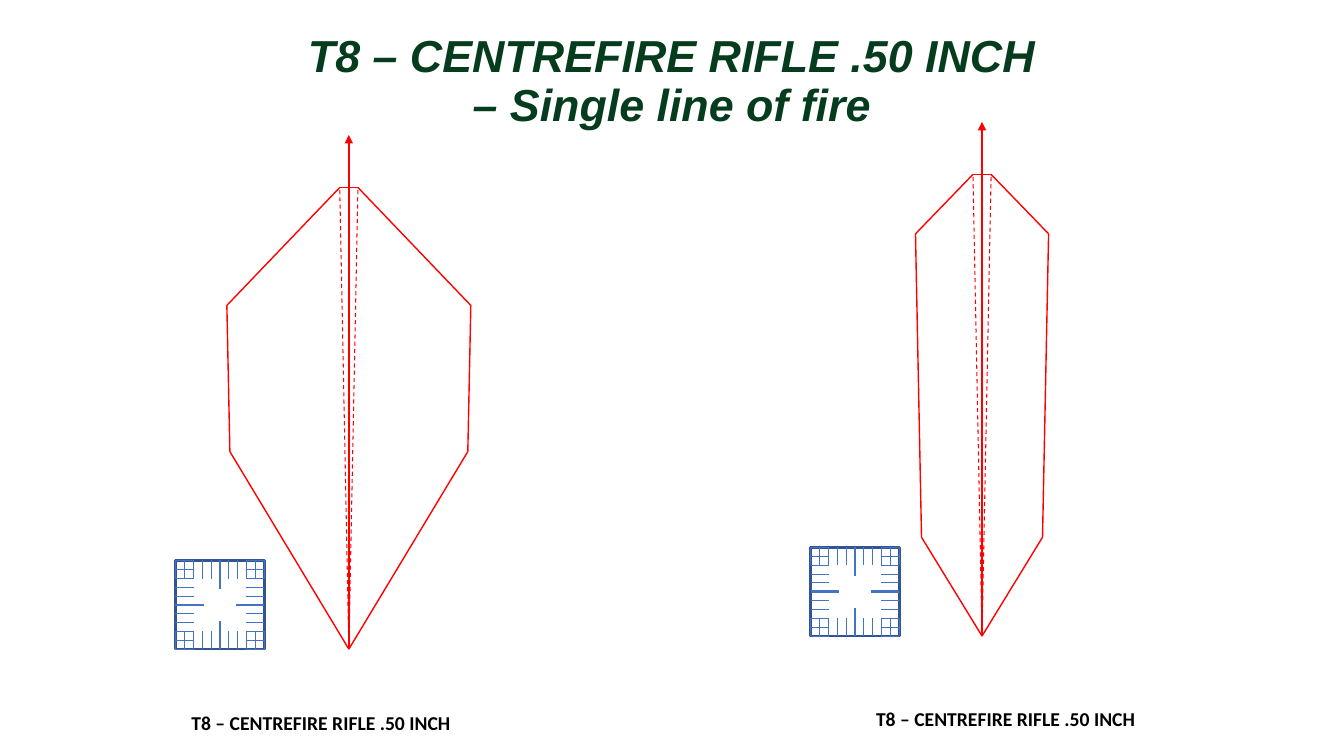
from lxml import etree
from pptx import Presentation
from pptx.dml.color import RGBColor
from pptx.enum.dml import MSO_LINE
from pptx.enum.shapes import MSO_CONNECTOR, MSO_SHAPE
from pptx.enum.text import MSO_ANCHOR, MSO_AUTO_SIZE, PP_ALIGN
from pptx.oxml.ns import qn
from pptx.util import Inches, Pt

RECT = MSO_SHAPE.RECTANGLE
STRAIGHT = MSO_CONNECTOR.STRAIGHT
DASH = MSO_LINE.DASH
CENTER = PP_ALIGN.CENTER
TOP = MSO_ANCHOR.TOP
GROW = MSO_AUTO_SIZE.SHAPE_TO_FIT_TEXT

COLORS = {
    "title": "053C1E",
    "label": "000000",
    "zone": "FF0000",
    "frame": "325491",
    "tick": "4472C4",
}
NAME = "T8 – CENTREFIRE RIFLE .50 INCH"


class Board:
    def __init__(self, slide):
        self.slide = slide
        self.group = None

    def color(self, name):
        return RGBColor.from_string(COLORS[name])

    def text(self, box, words, font, size, color, slant=False, space=None):
        shape = self.slide.shapes.add_textbox(*map(Inches, box))
        frame = shape.text_frame
        frame.word_wrap = True
        frame.vertical_anchor = TOP
        frame.text = words
        for para in frame.paragraphs:
            para.alignment = CENTER
            if space:
                para.line_spacing = space
            for run in para.runs:
                run.font.name = font
                run.font.size = Pt(size)
                run.font.bold = True
                run.font.italic = slant
                run.font.color.rgb = self.color(color)
        return frame

    def label(self, left, top):
        frame = self.text((left, top, 4.07, 0.34), NAME, "Calibri", 14, "label")
        frame.auto_size = GROW

    def line(self, start, end, color, width, dash=None, arrow=False):
        ends = map(Inches, (*start, *end))
        line = self.group.shapes.add_connector(STRAIGHT, *ends)
        line.line.color.rgb = self.color(color)
        line.line.width = Pt(width)
        if dash:
            line.line.dash_style = dash
        if arrow:
            tail = etree.SubElement(line.line._get_or_add_ln(), qn("a:tailEnd"))
            tail.set("type", "triangle")
        etree.SubElement(line._element.spPr, qn("a:effectLst"))
        return line

    def square(self, left, top, size):
        box = map(Inches, (left, top, size, size))
        shape = self.group.shapes.add_shape(RECT, *box)
        shape.shadow.inherit = False
        shape.fill.background()
        shape.line.color.rgb = self.color("frame")
        shape.line.width = Pt(2)
        return shape

    def scale(self, left, base):
        """Draw the square with ten divisions ticked inward from each side."""
        size, parts = 0.88, 10
        top, right = base - size, left + size
        frame = self.square(left, top, size)
        for i in range(parts + 1):
            mid = i == parts // 2
            tick, width = (0.28, 1.75) if mid else (0.18, 0.5)
            x, y = left + i * size / parts, top + i * size / parts
            sides = (
                ((x, top), (x, top + tick)),
                ((left, y), (left + tick, y)),
                ((x, base), (x, base - tick)),
                ((right, y), (right - tick, y)),
            )
            for site, (start, end) in enumerate(sides):
                line = self.line(start, end, "tick", width)
                if mid:
                    line.begin_connect(frame, site)

    def zone(self, axis, base, waist, wide):
        """Draw the danger area; waist and wide are (half width, y)."""
        nose, half = base - 4.58, 0.09
        origin = (axis, base)
        self.line(origin, (axis, base - 5.1), "zone", 1.5, arrow=True)
        for side in (-1, 1):
            tip = (axis + side * half, nose)
            bends = [(axis + side * dx, y) for dx, y in (waist, wide)]
            edge = [origin, *bends, tip]
            for start, end in zip(edge, edge[1:]):
                self.line(start, end, "zone", 1)
            self.line(origin, tip, "zone", 0.75, dash=DASH)
        self.line((axis - half, nose), (axis + half, nose), "zone", 1)

    def chart(self, left, axis, base, waist, wide):
        """Group one scale square with its danger area."""
        self.group = self.slide.shapes.add_group_shape()
        self.scale(left, base)
        self.zone(axis, base, waist, wide)


def main():
    deck = Presentation()
    deck.slide_width = Inches(13.33)
    deck.slide_height = Inches(7.5)
    board = Board(deck.slides.add_slide(deck.slide_layouts[6]))

    board.label(7.94, 6.96)
    board.chart(8.04, 9.74, 6.31, waist=(0.6, 5.33), wide=(0.66, 2.32))
    board.label(1.15, 7)
    board.text((0, 0.29, 13.33, 0.97), NAME + "\n– Single line of fire",
               "Arial", 32, "title", slant=True, space=0.9)
    board.chart(1.74, 3.46, 6.44, waist=(1.18, 4.48), wide=(1.21, 3.03))
    deck.save("out.pptx")


if __name__ == "__main__":
    main()
